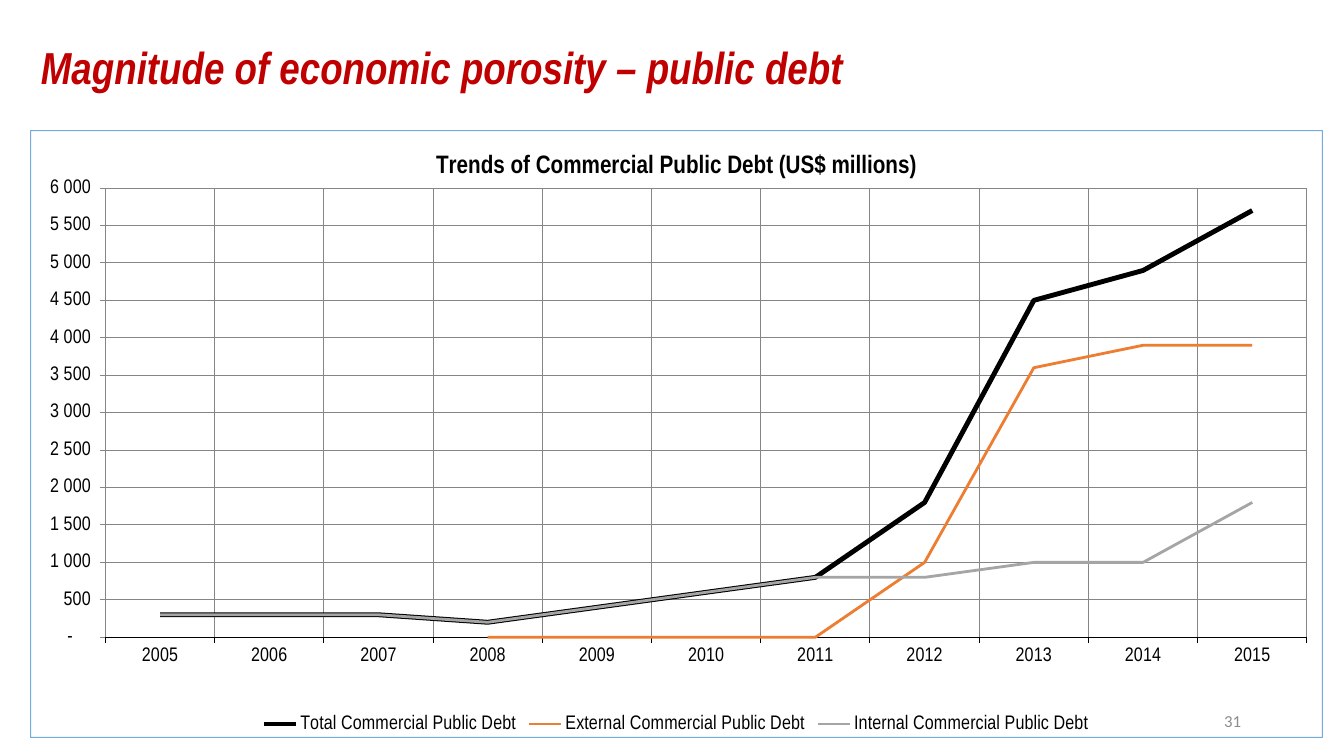
from lxml import etree
from pptx import Presentation
from pptx.chart.data import CategoryChartData
from pptx.dml.color import RGBColor
from pptx.enum.chart import XL_CHART_TYPE as ChartType
from pptx.enum.chart import XL_LEGEND_POSITION as LegendPosition
from pptx.enum.chart import XL_TICK_MARK as TickMark
from pptx.enum.text import MSO_ANCHOR as Anchor
from pptx.enum.text import PP_ALIGN as Align
from pptx.oxml import parse_xml
from pptx.oxml.ns import nsdecls, qn
from pptx.util import Emu, Pt

# Content
TITLE = "Magnitude of economic porosity – public debt"
CHART_TITLE = "Trends of Commercial Public Debt (US$ millions)"
PAGE_NUMBER = "31"
YEARS = [str(year) for year in range(2005, 2016)]
# name, values, colour key, line width in points
DEBT_SERIES = [
    ("Total Commercial Public Debt",
     [300, 300, 300, 200, 400, 600, 800, 1800, 4500, 4900, 5700], "black", 3.5),
    ("External Commercial Public Debt",
     [None, None, None, 0, 0, 0, 0, 1000, 3600, 3900, 3900], "orange", 2),
    ("Internal Commercial Public Debt",
     [300, 300, 300, 200, 400, 600, 800, 800, 1000, 1000, 1800], "gray", 2),
]
NUMBER_FORMAT = r'_(* #\ ##0_);_(* \(#\ ##0\);_(* "-"??_);'

# Look
THEME = {
    "red": "C00000", "black": "000000", "orange": "ED7D31", "gray": "A5A5A5",
    "grid": "868686", "border": "5B9BD5", "number": "8C8C8C",
    "font": "Arial Narrow", "number_font": "Calibri",
    "title_size": 32, "chart_title_size": 18, "chart_size": 14, "number_size": 12,
}

# Places in px: left, top, width, height
PAGE_SIZE = (1344, 756)
TITLE_BOX = (31, 32, 1292, 76)
CHART_BOX = (30, 130, 1293, 608)
NUMBER_BOX = (949, 701, 302, 40)
PLOT_SHARES = {"x": 0.058, "y": 0.095, "w": 0.93, "h": 0.74}
EMU_PER_PX = 914400 / 100.8


def px(*lengths):
    return [Emu(round(length * EMU_PER_PX)) for length in lengths]


def color(name):
    return RGBColor.from_string(THEME[name])


def style_font(font, size, tint="black", face="font", bold=False, italic=False):
    font.size, font.name = Pt(THEME[size]), THEME[face]
    font.bold, font.italic = bold, italic
    font.color.rgb = color(tint)


def style_line(line, tint, width=0.75):
    line.color.rgb = color(tint)
    line.width = Pt(width)


def add_text(page, place, text, align=Align.LEFT, spacing=1.0, **font_format):
    box = page.shapes.add_textbox(*px(*place))
    frame = box.text_frame
    frame.word_wrap = True
    frame.vertical_anchor = Anchor.MIDDLE
    para = frame.paragraphs[0]
    para.alignment, para.line_spacing = align, spacing
    span = para.add_run()
    span.text = text
    style_font(span.font, **font_format)


def set_plot_layout(chart):
    plot_area = chart.element.find(".//" + qn("c:plotArea"))
    for old in plot_area.findall(qn("c:layout")):
        plot_area.remove(old)
    layout = etree.Element(qn("c:layout"))
    manual = etree.SubElement(layout, qn("c:manualLayout"))
    settings = {"layoutTarget": "inner", "xMode": "edge", "yMode": "edge", **PLOT_SHARES}
    for tag, value in settings.items():
        etree.SubElement(manual, qn("c:" + tag)).set("val", str(value))
    plot_area.insert(0, layout)


def set_chart_border(chart):
    border = parse_xml(
        f'<c:spPr {nsdecls("c", "a")}><a:noFill/><a:ln w="{Pt(0.75)}"><a:solidFill>'
        f'<a:srgbClr val="{THEME["border"]}"><a:alpha val="83000"/></a:srgbClr>'
        '</a:solidFill></a:ln></c:spPr>')
    chart.element.find(qn("c:chart")).addnext(border)


def add_debt_chart(page):
    data = CategoryChartData()
    data.categories = YEARS
    for name, values, _, _ in DEBT_SERIES:
        data.add_series(name, values)
    chart = page.shapes.add_chart(ChartType.LINE, *px(*CHART_BOX), data).chart
    style_font(chart.font, "chart_size")

    # Title and legend
    chart.has_title = True
    span = chart.chart_title.text_frame.paragraphs[0].add_run()
    span.text = CHART_TITLE
    style_font(span.font, "chart_title_size", bold=True)
    chart.has_legend = True
    chart.legend.position = LegendPosition.BOTTOM
    chart.legend.include_in_layout = False

    # Axes
    for axis, tint in ((chart.category_axis, "black"), (chart.value_axis, "grid")):
        axis.has_major_gridlines = True
        style_line(axis.major_gridlines.format.line, "grid")
        style_line(axis.format.line, tint)
        axis.major_tick_mark = TickMark.OUTSIDE
        axis.minor_tick_mark = TickMark.NONE
    amounts = chart.value_axis
    amounts.minimum_scale, amounts.maximum_scale, amounts.major_unit = 0, 6000, 500
    amounts.tick_labels.number_format = NUMBER_FORMAT
    amounts.tick_labels.number_format_is_linked = False

    # Lines
    plot = chart.plots[0]
    plot.vary_by_categories = False
    for series, (_, _, tint, width) in zip(plot.series, DEBT_SERIES):
        series.smooth = False
        style_line(series.format.line, tint, width)
    set_plot_layout(chart)
    set_chart_border(chart)


def main():
    deck = Presentation()
    deck.slide_width, deck.slide_height = px(*PAGE_SIZE)
    page = deck.slides.add_slide(deck.slide_layouts[6])
    add_text(page, TITLE_BOX, TITLE, spacing=0.9, size="title_size", tint="red",
             bold=True, italic=True)
    add_debt_chart(page)
    add_text(page, NUMBER_BOX, PAGE_NUMBER, align=Align.RIGHT, size="number_size",
             tint="number", face="number_font")
    deck.save("out.pptx")


if __name__ == "__main__":
    main()
